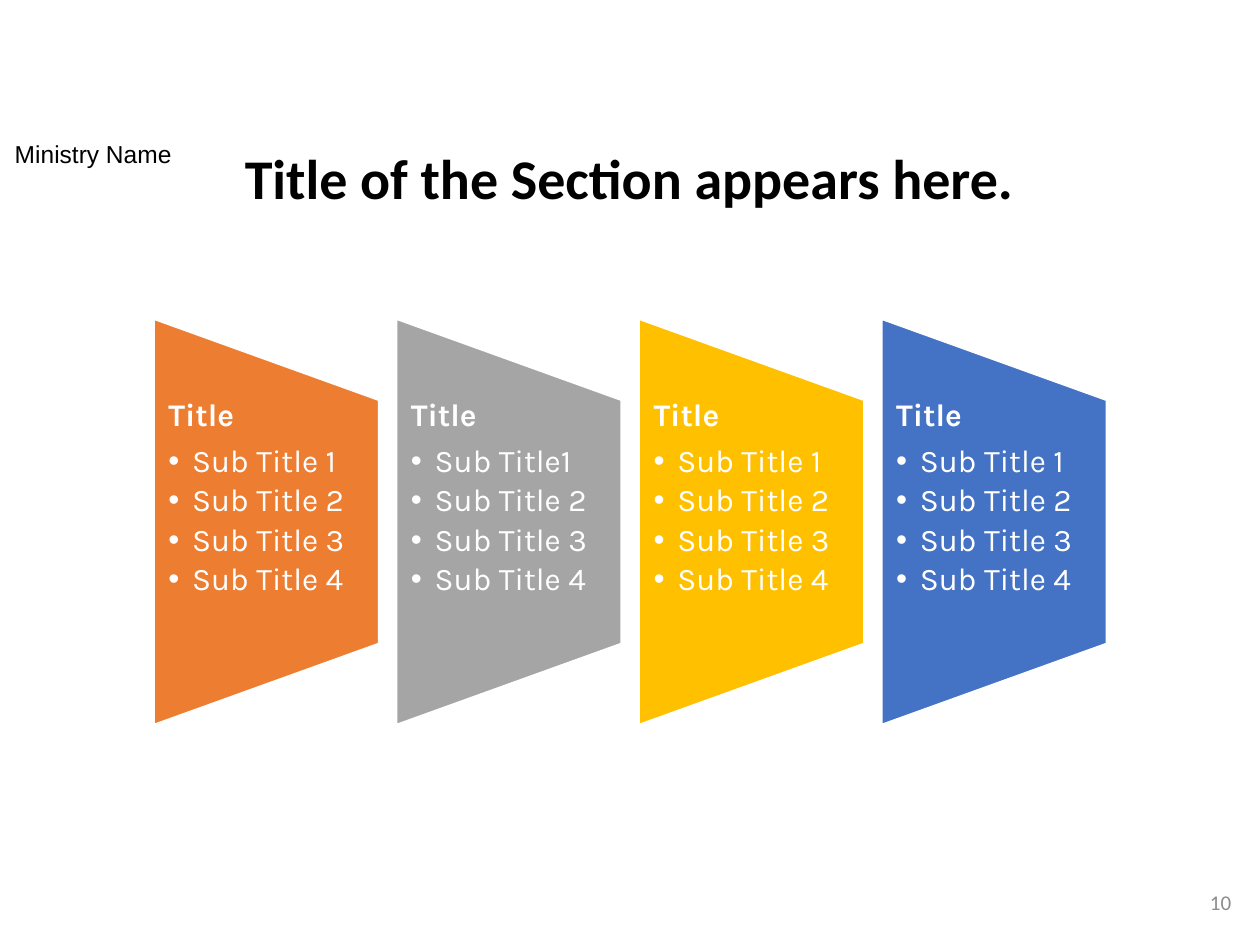
"""Build a section slide with four tapered panels of bulleted subtitles."""
from lxml import etree
from pptx import Presentation
from pptx import util as u
from pptx.dml.color import RGBColor
from pptx.enum import shapes, text
from pptx.oxml.ns import qn

COLORS = {
    "black": "000000",
    "white": "FFFFFF",
    "number": "8C8C8C",
    "orange": "ED7D31",
    "gray": "A5A5A5",
    "yellow": "FFC000",
    "blue": "4472C4",
}
SUBTITLES = ["Sub Title 1", "Sub Title 2", "Sub Title 3", "Sub Title 4"]
PANELS = [
    ("orange", SUBTITLES),
    ("gray", ["Sub Title1"] + SUBTITLES[1:]),
    ("yellow", SUBTITLES),
    ("blue", SUBTITLES),
]
FIRST_CENTER, PANEL_PITCH, PANEL_MIDDLE = 5.37, 4.89, 10.52
PANEL_WIDTH, PANEL_HEIGHT, LIST_HEIGHT = 4.55, 8.2, 4.93
LIST_INSET, BULLET_INDENT = 0.3, 0.48


def color(name):
    return RGBColor.from_string(COLORS[name])


def style(para, font, size, shade, bold=False, spacing=None, after=0):
    para.line_spacing = spacing
    para.space_after = u.Pt(after)
    para.font.name = font
    para.font.size = u.Pt(size)
    para.font.bold = bold
    para.font.color.rgb = color(shade)


def add_bullet(para):
    properties = para._p.get_or_add_pPr()
    properties.set("marL", str(u.Cm(BULLET_INDENT)))
    properties.set("indent", str(-u.Cm(BULLET_INDENT)))
    etree.SubElement(properties, qn("a:buFont")).set("typeface", "Arial")
    etree.SubElement(properties, qn("a:buChar")).set("char", "•")


def add_box(page, left, top, width, height):
    box = page.shapes.add_textbox(u.Cm(left), u.Cm(top), u.Cm(width), u.Cm(height))
    box.text_frame.word_wrap = True
    return box.text_frame


def add_label(page, place, words, align, **look):
    frame = add_box(page, *place)
    para = frame.paragraphs[0]
    para.text = words
    para.alignment = align
    style(para, **look)
    return frame


def add_panel(page, center, shade):
    panel = page.shapes.add_shape(
        shapes.MSO_SHAPE.FLOWCHART_MANUAL_OPERATION,
        u.Cm(center - PANEL_HEIGHT / 2), u.Cm(PANEL_MIDDLE - PANEL_WIDTH / 2),
        u.Cm(PANEL_HEIGHT), u.Cm(PANEL_WIDTH))
    panel.rotation = 270
    panel.shadow.inherit = False
    panel.fill.solid()
    panel.fill.fore_color.rgb = color(shade)
    panel.line.color.rgb = color("white")
    panel.line.width = u.Pt(1.5)


def add_list(page, center, subtitles):
    frame = add_box(page, center - PANEL_WIDTH / 2, PANEL_MIDDLE - LIST_HEIGHT / 2,
                    PANEL_WIDTH, LIST_HEIGHT)
    frame.margin_left = frame.margin_right = u.Cm(LIST_INSET)
    frame.margin_top = frame.margin_bottom = 0
    heading = frame.paragraphs[0]
    heading.text = "Title"
    style(heading, "Karla", 18, "white", bold=True, spacing=0.9, after=6.6)
    for subtitle in subtitles:
        para = frame.add_paragraph()
        para.text = subtitle
        para.level = 1
        add_bullet(para)
        style(para, "Karla", 18, "white", spacing=0.9, after=3.1)


def main():
    deck = Presentation()
    deck.slide_width, deck.slide_height = u.Cm(25.4), u.Cm(19.05)
    page = deck.slides.add_slide(deck.slide_layouts[6])
    number = add_label(page, (19.35, 17.68, 5.72, 1.02), "10", text.PP_ALIGN.RIGHT,
                       font="Calibri", size=12, shade="number")
    number.vertical_anchor = text.MSO_ANCHOR.MIDDLE
    add_label(page, (4.19, 2.92, 17, 2), "Title of the Section appears here.",
              text.PP_ALIGN.CENTER, font="Calibri", size=32, shade="black",
              bold=True, spacing=0.9)
    add_label(page, (0, 2.74, 3.76, 1.65), "Ministry Name", text.PP_ALIGN.CENTER,
              font="Arial", size=14, shade="black", spacing=0.9)
    for index, (shade, subtitles) in enumerate(PANELS):
        center = FIRST_CENTER + index * PANEL_PITCH
        add_panel(page, center, shade)
        add_list(page, center, subtitles)
    deck.save("out.pptx")


if __name__ == "__main__":
    main()
